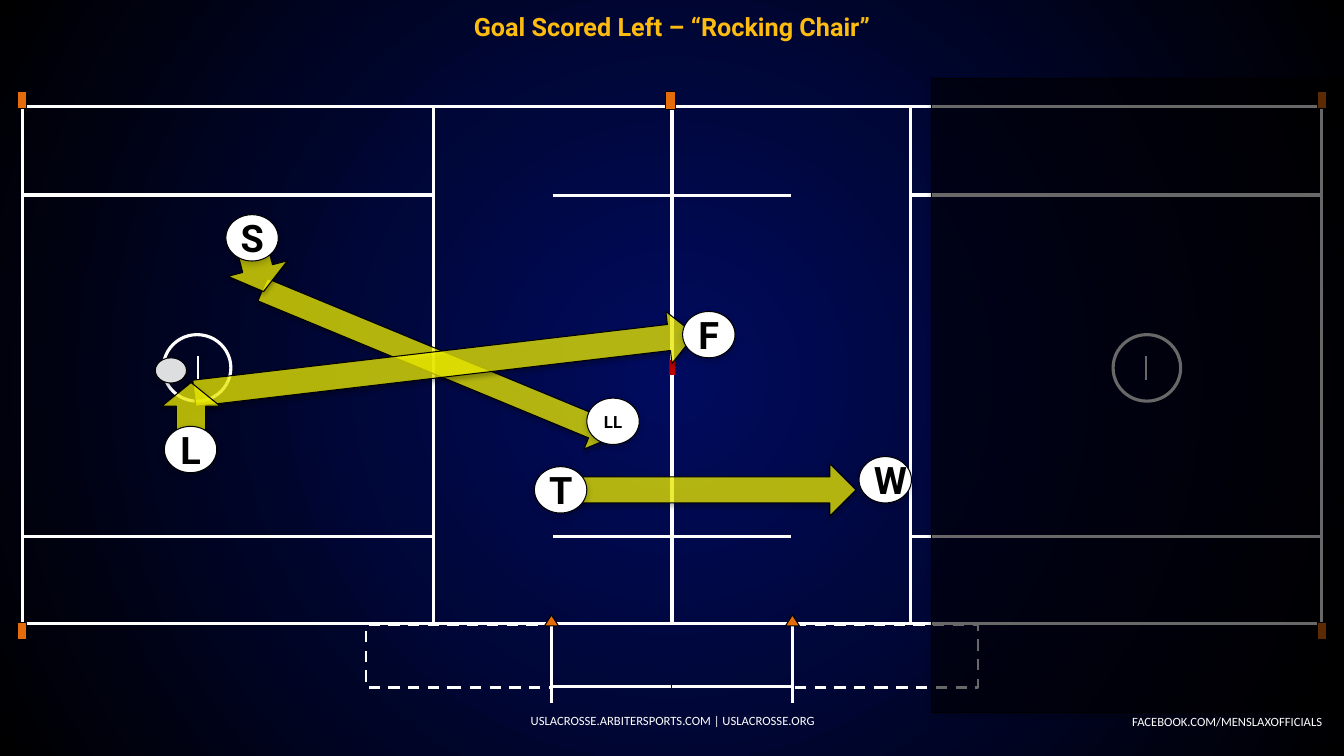
"""Build the lacrosse officiating slide: Goal Scored Left, "Rocking Chair"."""
from lxml import etree
from pptx import Presentation
from pptx.dml.color import RGBColor
from pptx.enum import dml, shapes, text
from pptx.oxml import parse_xml
from pptx.oxml.ns import nsdecls, qn
from pptx.util import Inches, Pt

WHITE = RGBColor(0xFF, 0xFF, 0xFF)
BLACK = RGBColor(0, 0, 0)
NAVY = RGBColor(0x00, 0x0B, 0x5F)
ORANGE = RGBColor(0xE4, 0x6C, 0x0A)
RED = RGBColor(0xC0, 0, 0)
YELLOW = RGBColor(0xFF, 0xFF, 0)
GOLD = RGBColor(0xFE, 0xBC, 0x11)
BALL_GREY = RGBColor(0xDC, 0xDE, 0xE0)
KIND = shapes.MSO_SHAPE
WIDTH = 13.33
CENTRE = 6.67
ARROW_SHADOW = (35, 3.1, 1.8)
DISC_SHADOW = (20, 5, 2)


def paint(shape, fill=None, line=BLACK, weight=0.75, opacity=100, shadow=None):
    shape.shadow.inherit = False
    if fill is None:
        shape.fill.background()
    else:
        shape.fill.solid()
        shape.fill.fore_color.rgb = fill
    if opacity < 100:
        colour = shape.element.spPr.find(qn("a:solidFill"))[0]
        etree.SubElement(colour, qn("a:alpha"), val=str(opacity * 1000))
    if line is None:
        shape.line.fill.background()
    else:
        shape.line.color.rgb = line
        shape.line.width = Pt(weight)
    if shadow:
        strength, blur, distance = shadow
        shape.element.spPr.find(qn("a:effectLst")).append(parse_xml(
            f'<a:outerShdw {nsdecls("a")} blurRad="{Pt(blur)}" dist="{Pt(distance)}" '
            f'dir="5400000" rotWithShape="0"><a:srgbClr val="000000">'
            f'<a:alpha val="{strength * 1000}"/></a:srgbClr></a:outerShdw>'))


def write(frame, words, size, face, colour, bold=False, align=text.PP_ALIGN.CENTER):
    frame.vertical_anchor = text.MSO_ANCHOR.MIDDLE
    paragraph = frame.paragraphs[0]
    paragraph.alignment = align
    run = paragraph.add_run()
    run.text = words
    run.font.size = Pt(size)
    run.font.name = face
    run.font.bold = bold
    run.font.color.rgb = colour


deck = Presentation()
deck.slide_width = Inches(WIDTH)
deck.slide_height = Inches(7.5)
slide = deck.slides.add_slide(deck.slide_layouts[5])

backdrop = slide.background.fill
backdrop.gradient()
for stop, colour in zip(backdrop.gradient_stops, (NAVY, BLACK)):
    stop.color.rgb = colour
gradient = slide.element.find(".//" + qn("a:gradFill"))
gradient.replace(gradient.find(qn("a:lin")), parse_xml(
    f'<a:path {nsdecls("a")} path="circle">'
    '<a:fillToRect l="50000" t="50000" r="50000" b="50000"/></a:path>'))

field_areas = [
    (KIND.RECTANGLE, 4.3, 1.06, 2.37, 5.13),
    (KIND.RECTANGLE, 0.22, 1.06, 4.08, 0.87),
    (KIND.RECTANGLE, 0.22, 5.32, 4.08, 0.87),
    (KIND.RECTANGLE, 0.22, 1.94, 4.08, 3.38),
    (KIND.OVAL, 1.62, 3.32, 0.67, 0.66),
]
field_lines = [
    (1.96, 3.77, 1.96, 3.53, 1.5),
    (5.47, 6.97, 5.47, 6.21, 2.25),
    (6.66, 5.32, 5.48, 5.32, 2.25),
    (6.66, 1.94, 5.48, 1.94, 2.25),
    (6.66, 6.81, 5.48, 6.81, 2.25),
]
for mirrored in (False, True):
    for kind, left, top, width, height in field_areas:
        x = WIDTH - left - width if mirrored else left
        area = slide.shapes.add_shape(kind, Inches(x), Inches(top), Inches(width), Inches(height))
        paint(area, line=WHITE, weight=2.25)

    bench = slide.shapes.add_shape(
        KIND.RECTANGLE, Inches(7.86 if mirrored else 3.63), Inches(6.2), Inches(1.84), Inches(0.62))
    paint(bench, line=WHITE, weight=2)
    bench.line.dash_style = dml.MSO_LINE.DASH
    if mirrored:
        bench.element.spPr.xfrm.set("flipH", "1")

    for x1, y1, x2, y2, weight in field_lines:
        if mirrored:
            x1, x2 = WIDTH - x1, WIDTH - x2
        marking = slide.shapes.add_connector(
            shapes.MSO_CONNECTOR.STRAIGHT, Inches(x1), Inches(y1), Inches(x2), Inches(y2))
        marking.line.color.rgb = WHITE
        marking.line.width = Pt(weight)
        etree.SubElement(marking.element.spPr, qn("a:effectLst"))

    for top in (0.91, 6.18):
        pylon = slide.shapes.add_shape(
            KIND.RECTANGLE, Inches(13.07 if mirrored else 0.17), Inches(top), Inches(0.09), Inches(0.17))
        paint(pylon, ORANGE)

    tip = 7.86 if mirrored else 5.47
    outline = slide.shapes.build_freeform(Inches(tip), Inches(6.1))
    outline.add_line_segments(
        [(Inches(tip + 0.07), Inches(6.21)), (Inches(tip - 0.07), Inches(6.21))], close=True)
    paint(outline.convert_to_shape(), ORANGE)

midfield_pylon = slide.shapes.add_shape(
    KIND.RECTANGLE, Inches(6.6), Inches(0.91), Inches(0.1), Inches(0.18))
paint(midfield_pylon, ORANGE)
faceoff_mark = slide.shapes.add_shape(
    KIND.RECTANGLE, Inches(6.64), Inches(3.57), Inches(0.06), Inches(0.15))
paint(faceoff_mark, RED, line=None)

social = slide.shapes.add_textbox(Inches(11.09), Inches(7.03), Inches(2.12), Inches(0.25)).text_frame
social.word_wrap = False
social.auto_size = text.MSO_AUTO_SIZE.SHAPE_TO_FIT_TEXT
write(social, "FACEBOOK.COM/MENSLAXOFFICIALS", 9, "Calibri", WHITE, align=text.PP_ALIGN.RIGHT)

movements = [
    (5.55, 4.6, 2.94, 0.52, 0),
    (2.46, 3.36, 3.79, 0.48, 22.5),
    (1.91, 3.35, 5, 0.52, 353.3),
    (2.32, 2.36, 0.47, 0.61, 75.4),
    (1.66, 3.74, 0.47, 0.58, 270),
]
for left, top, width, height, angle in movements:
    movement = slide.shapes.add_shape(
        KIND.RIGHT_ARROW, Inches(left), Inches(top), Inches(width), Inches(height))
    movement.rotation = angle
    paint(movement, YELLOW, opacity=70, shadow=ARROW_SHADOW)

heading = slide.shapes.title
heading.left, heading.top = Inches(0), Inches(0.05)
heading.width, heading.height = Inches(WIDTH), Inches(0.42)
write(heading.text_frame, "Goal Scored Left – “Rocking Chair”", 18, "Roboto", GOLD, bold=True)
slide.shapes.element.append(heading.element)

shade = slide.shapes.add_shape(
    KIND.RECTANGLE, Inches(9.24), Inches(0.78), Inches(WIDTH - 9.24), Inches(6.29))
paint(shade, BLACK, opacity=50, shadow=ARROW_SHADOW)

ball = slide.shapes.add_shape(KIND.OVAL, Inches(1.54), Inches(3.55), Inches(0.31), Inches(0.25))
paint(ball, BALL_GREY, shadow=DISC_SHADOW)

officials = [
    ("S", 2.24, 2.13, 27),
    ("T", 5.3, 4.63, 27),
    ("L", 1.63, 4.23, 27),
    ("LL", 5.82, 3.95, 12),
    ("F", 6.77, 3.09, 27),
    ("W", 8.52, 4.53, 27),
]
for letter, left, top, size in officials:
    official = slide.shapes.add_shape(
        KIND.OVAL, Inches(left), Inches(top), Inches(0.52), Inches(0.46))
    paint(official, WHITE, shadow=DISC_SHADOW)
    label = official.text_frame
    label.margin_left = label.margin_right = Inches(0.07)
    label.margin_top = label.margin_bottom = Inches(0.07)
    write(label, letter, size, "Roboto", BLACK, bold=True)

sites = slide.shapes.add_textbox(Inches(4.56), Inches(6.95), Inches(4.22), Inches(0.4)).text_frame
sites.word_wrap = True
write(sites, "USLACROSSE.ARBITERSPORTS.COM | USLACROSSE.ORG", 9, "Calibri", WHITE)

deck.save("out.pptx")
